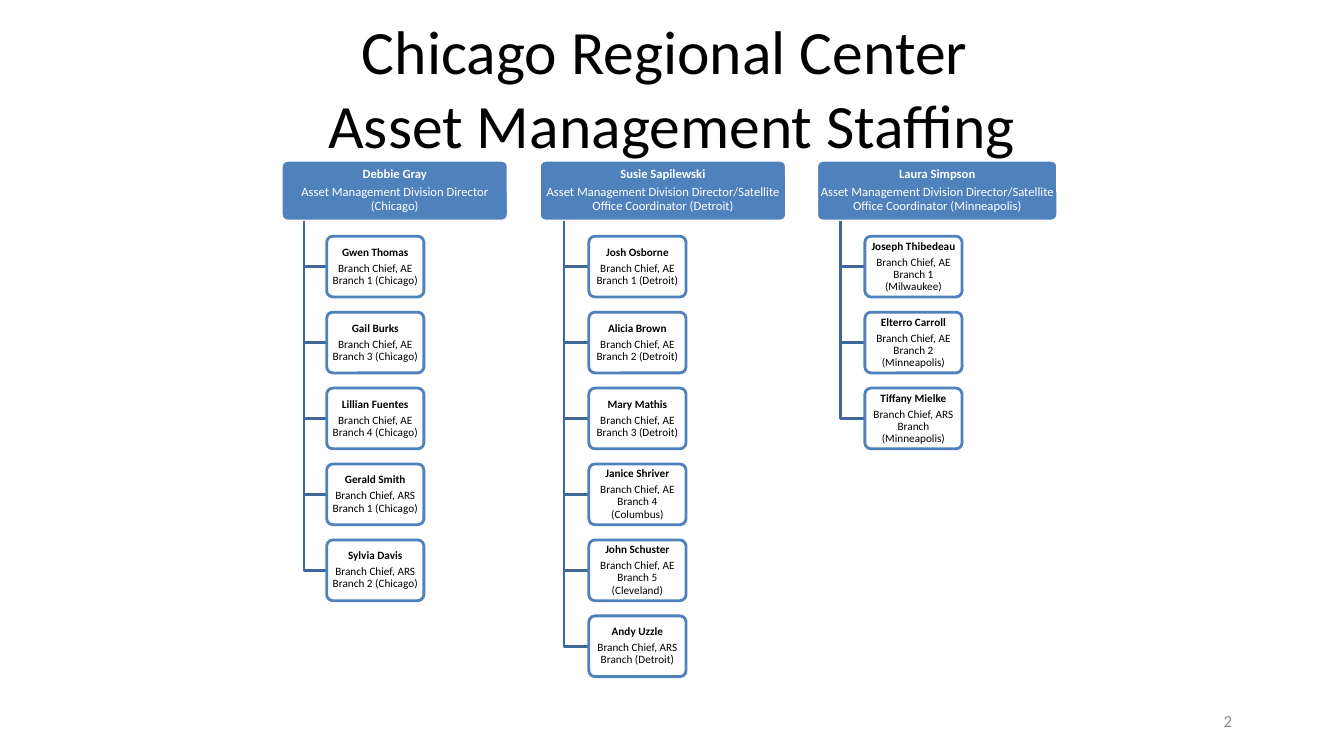
import pptx
import pptx.dml.color
import pptx.enum.shapes
import pptx.enum.text
import pptx.oxml
import pptx.oxml.ns
import pptx.util

RGBColor = pptx.dml.color.RGBColor
ALIGN = pptx.enum.text.PP_ALIGN
Inches = pptx.util.Inches
Pt = pptx.util.Pt

BLUE = RGBColor(0x4F, 0x81, 0xBD)
DARK_BLUE = RGBColor(0x3F, 0x67, 0x97)
WHITE = RGBColor(0xFF, 0xFF, 0xFF)
BLACK = RGBColor(0x00, 0x00, 0x00)
GRAY = RGBColor(0x89, 0x89, 0x89)

FONT = "Calibri"
FIRST_ROW, LAST_ROW = 1.59, 6.11
ROW_PITCH = (LAST_ROW - FIRST_ROW) / 6
BOX_HEIGHT = 0.8 * ROW_PITCH
BOX_WIDTH = 1.6 * BOX_HEIGHT
STEM_SHARE, BOX_SHARE = 0.1, 0.2

DIRECTOR = {"size": 9, "color": WHITE, "fill": BLUE, "line": WHITE, "opacity": 100}
CHIEF = {"size": 8, "color": BLACK, "fill": WHITE, "line": BLUE, "opacity": 90}

DIVISIONS = [
    (2.79, 2.25, "Debbie Gray", "Asset Management Division Director (Chicago)", [
        ("Gwen Thomas", "AE Branch 1 (Chicago)"),
        ("Gail Burks", "AE Branch 3 (Chicago)"),
        ("Lillian Fuentes", "AE Branch 4 (Chicago)"),
        ("Gerald Smith", "ARS Branch 1 (Chicago)"),
        ("Sylvia Davis", "ARS Branch 2 (Chicago)"),
    ]),
    (5.35, 2.45, "Susie Sapilewski",
     "Asset Management Division Director/Satellite Office Coordinator (Detroit)", [
        ("Josh Osborne", "AE Branch 1 (Detroit)"),
        ("Alicia Brown", "AE Branch 2 (Detroit)"),
        ("Mary Mathis", "AE Branch 3 (Detroit)"),
        ("Janice Shriver", "AE Branch 4 (Columbus)"),
        ("John Schuster", "AE Branch 5 (Cleveland)"),
        ("Andy Uzzle", "ARS Branch (Detroit)"),
     ]),
    (8.1, 2.39, "Laura Simpson",
     "Asset Management Division Director/Satellite Office Coordinator (Minneapolis)", [
        ("Joseph Thibedeau", "AE Branch 1 (Milwaukee)"),
        ("Elterro Carroll", "AE Branch 2 (Minneapolis)"),
        ("Tiffany Mielke", "ARS Branch (Minneapolis)"),
     ]),
]


def set_attributes(target, values):
    for name, value in values.items():
        setattr(target, name, value)


def row_top(row):
    return FIRST_ROW + row * ROW_PITCH


def format_frame(frame, horizontal, vertical):
    set_attributes(frame, {
        "word_wrap": True,
        "vertical_anchor": pptx.enum.text.MSO_ANCHOR.MIDDLE,
        "margin_left": Inches(horizontal),
        "margin_right": Inches(horizontal),
        "margin_top": Inches(vertical),
        "margin_bottom": Inches(vertical),
    })


def write_paragraph(paragraph, text, size, color, alignment, bold=False):
    paragraph.text = text
    paragraph.alignment = alignment
    set_attributes(paragraph.font, {"name": FONT, "size": Pt(size), "bold": bold})
    paragraph.font.color.rgb = color


def add_label(slide, area, text, size, color, alignment):
    label = slide.shapes.add_textbox(*map(Inches, area))
    format_frame(label.text_frame, 0.1, 0.05)
    write_paragraph(label.text_frame.paragraphs[0], text, size, color, alignment)


def add_person(slide, left, row, width, name, role, style):
    box = slide.shapes.add_shape(
        pptx.enum.shapes.MSO_SHAPE.ROUNDED_RECTANGLE,
        Inches(left), Inches(row_top(row)), Inches(width), Inches(BOX_HEIGHT))
    box.shadow.inherit = False
    box.adjustments[0] = 0.1
    box.fill.solid()
    box.fill.fore_color.rgb = style["fill"]
    if style["opacity"] < 100:
        color = box.fill._xPr.find(".//" + pptx.oxml.ns.qn("a:srgbClr"))
        color.append(pptx.oxml.parse_xml(
            f'<a:alpha {pptx.oxml.ns.nsdecls("a")} val="{style["opacity"] * 1000}"/>'))
    box.line.color.rgb = style["line"]
    box.line.width = Pt(2)
    frame = box.text_frame
    format_frame(frame, 0.02, 0.01)
    for paragraph, text, bold in ((frame.paragraphs[0], name, True),
                                  (frame.add_paragraph(), role, False)):
        write_paragraph(paragraph, text, style["size"], style["color"], ALIGN.CENTER, bold)
        set_attributes(paragraph, {
            "line_spacing": 0.9, "space_after": Pt(0.35 * style["size"])})


def add_elbow(slide, stem, box_left, row):
    start = row_top(0) + BOX_HEIGHT
    middle = row_top(row) + BOX_HEIGHT / 2
    builder = slide.shapes.build_freeform(Inches(stem), Inches(start))
    builder.add_line_segments(
        [(Inches(stem), Inches(middle)), (Inches(box_left), Inches(middle))], close=False)
    elbow = builder.convert_to_shape()
    elbow.shadow.inherit = False
    elbow.fill.background()
    elbow.line.color.rgb = DARK_BLUE
    elbow.line.width = Pt(2)


def add_division(slide, left, width, name, role, chiefs):
    add_person(slide, left, 0, width, name, role, DIRECTOR)
    stem = left + STEM_SHARE * width
    box_left = left + BOX_SHARE * width
    for row, (chief, branch) in enumerate(chiefs, start=1):
        add_elbow(slide, stem, box_left, row)
        add_person(slide, box_left, row, BOX_WIDTH, chief, f"Branch Chief, {branch}", CHIEF)


def main():
    presentation = pptx.Presentation()
    set_attributes(presentation, {"slide_width": Inches(13.33), "slide_height": Inches(7.5)})
    slide = presentation.slides.add_slide(presentation.slide_layouts[6])
    add_label(slide, (1.08, 0.32, 11.17, 1.09),
              "Chicago Regional Center \vAsset Management Staffing", 44, BLACK, ALIGN.CENTER)
    add_label(slide, (9.56, 6.95, 2.76, 0.4), "2", 12, GRAY, ALIGN.RIGHT)
    for division in DIVISIONS:
        add_division(slide, *division)
    presentation.save("out.pptx")


if __name__ == "__main__":
    main()
